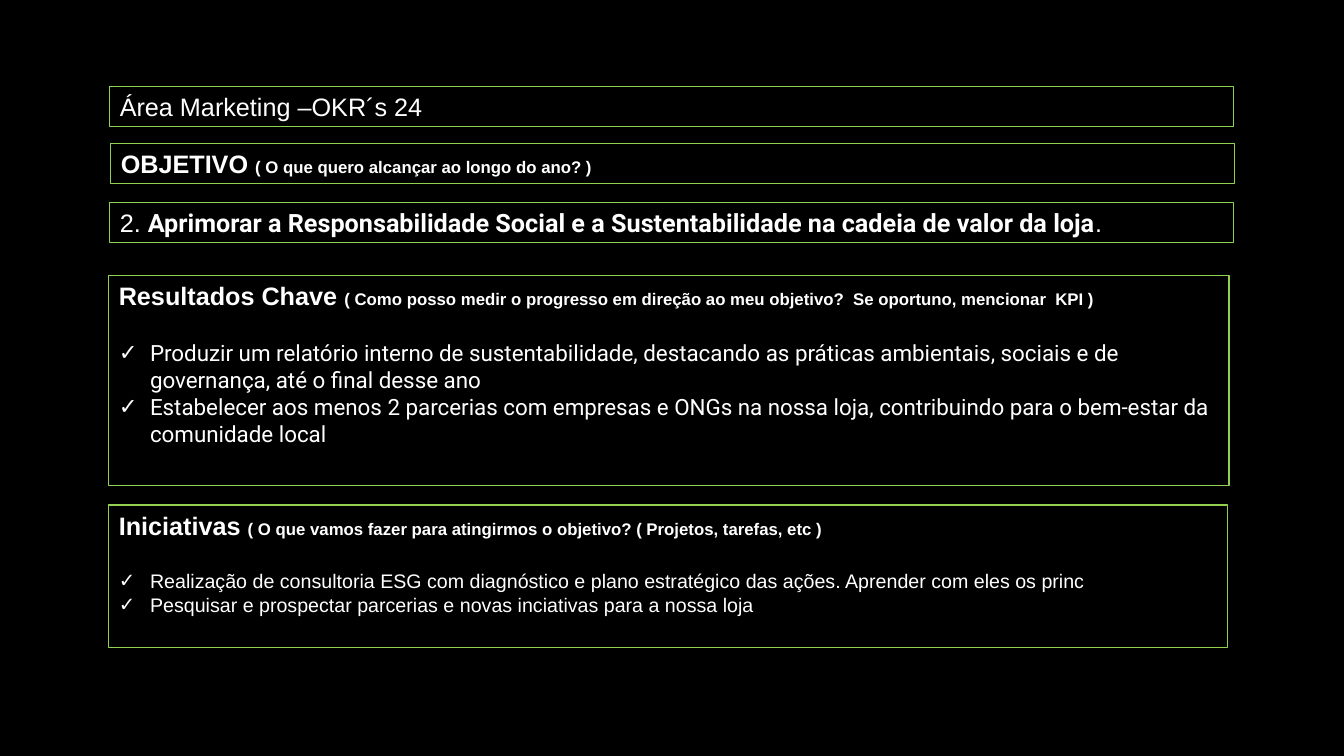
from lxml import etree
from pptx import Presentation
from pptx.dml.color import RGBColor
from pptx.enum import shapes, text
from pptx.oxml.ns import qn
from pptx.util import Inches, Pt

COLORS = {"background": "000000", "border": "92D050", "text": "FFFFFF"}
CHECK_INDENT = Inches(0.31)
LIST_GAP = Pt(20.7)  # one heading line between heading and list

# Each panel: (left, top, width, height), heading runs, list font, list size, list items
# Each run: text, size, font, bold
PANELS = [
    ((1.09, 0.86, 11.14, 0.4),
     [("Área Marketing –OKR´s 24", 18, "Arial", False)],
     None, None, []),
    ((1.1, 1.42, 11.14, 0.4),
     [("OBJETIVO ", 18, "Arial", True),
      ("( O que quero alcançar ao longo do ano? )", 12, "Arial", True)],
     None, None, []),
    ((1.09, 2.01, 11.14, 0.4),
     [("2. ", 18, "Arial", False),
      ("Aprimorar a Responsabilidade Social e a Sustentabilidade "
       "na cadeia de valor da loja", 18, "Roboto", True),
      (".", 18, "Arial", False)],
     None, None, []),
    ((1.08, 2.73, 11.11, 2.09),
     [("Resultados Chave ", 18, "Arial", True),
      ("( Como posso medir o progresso em direção ao meu objetivo?  "
       "Se oportuno, mencionar  KPI )", 12, "Arial", True)],
     "Roboto", 16,
     ["Produzir um relatório interno de sustentabilidade, destacando as práticas "
      "ambientais, sociais e de governança, até o final desse ano",
      "Estabelecer aos menos 2 parcerias com empresas e ONGs na nossa loja, "
      "contribuindo para o bem-estar da comunidade local"]),
    ((1.08, 5.01, 11.09, 1.41),
     [("Iniciativas ", 18, "Arial", True),
      ("( O que vamos fazer para atingirmos o objetivo? ( Projetos, tarefas, etc )",
       12, "Arial", True)],
     "Arial", 14,
     ["Realização de consultoria ESG com diagnóstico e plano estratégico das ações. "
      "Aprender com eles os princ",
      "Pesquisar e prospectar parcerias e novas inciativas para a nossa loja"]),
]


def color(name):
    return RGBColor.from_string(COLORS[name])


def add_run(paragraph, words, size, font, bold):
    run = paragraph.add_run()
    run.text = words
    run.font.size = Pt(size)
    run.font.name = font
    run.font.bold = bold
    run.font.color.rgb = color("text")


def add_check(paragraph):
    props = paragraph._p.get_or_add_pPr()
    props.set("marL", str(CHECK_INDENT))
    props.set("indent", str(-CHECK_INDENT))
    etree.SubElement(props, qn("a:buFont")).set("typeface", "Arial")
    etree.SubElement(props, qn("a:buChar")).set("char", "✓")


def add_panel(slide, place, heading, list_font, list_size, items):
    panel = slide.shapes.add_shape(
        shapes.MSO_SHAPE.RECTANGLE, *[Inches(length) for length in place])
    panel.shadow.inherit = False
    panel.fill.background()
    panel.line.color.rgb = color("border")
    panel.line.width = Pt(0.75)

    frame = panel.text_frame
    frame.word_wrap = True
    frame.vertical_anchor = text.MSO_ANCHOR.TOP
    title = frame.paragraphs[0]
    title.alignment = text.PP_ALIGN.LEFT
    for run in heading:
        add_run(title, *run)

    for number, item in enumerate(items):
        line = frame.add_paragraph()
        line.alignment = text.PP_ALIGN.LEFT
        if number == 0:
            line.space_before = LIST_GAP
        add_check(line)
        add_run(line, item, list_size, list_font, False)


def main():
    deck = Presentation()
    deck.slide_width, deck.slide_height = Inches(13.33), Inches(7.5)
    slide = deck.slides.add_slide(deck.slide_layouts[6])
    slide.background.fill.solid()
    slide.background.fill.fore_color.rgb = color("background")
    for panel in PANELS:
        add_panel(slide, *panel)
    deck.save("out.pptx")


if __name__ == "__main__":
    main()
